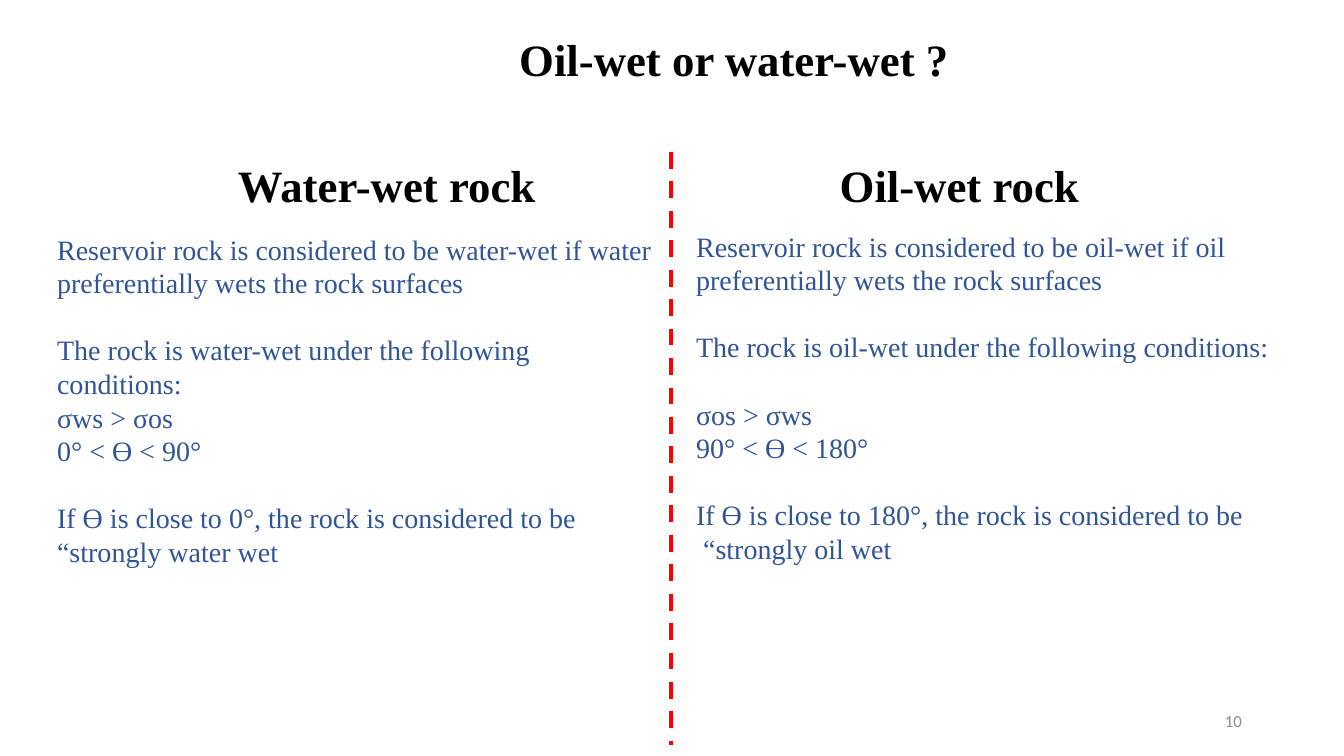
from pptx import Presentation
from pptx.dml.color import RGBColor
from pptx.enum.dml import MSO_LINE_DASH_STYLE as Dash
from pptx.enum.shapes import MSO_CONNECTOR as Connector, MSO_SHAPE as Shape
from pptx.enum.text import MSO_ANCHOR as Anchor, MSO_AUTO_SIZE as AutoSize, PP_ALIGN as Align
from pptx.oxml.ns import qn
from pptx.util import Pt
from lxml.etree import SubElement

PX = 914400 / 100.8
BLACK = RGBColor(0, 0, 0)
BLUE = RGBColor(0x2F, 0x55, 0x97)
RED = RGBColor(0xFF, 0, 0)
GRAY = RGBColor(0x8C, 0x8C, 0x8C)
SERIF = "Times New Roman"
TWO_CONTENT_LAYOUT = 3

# Each condition is (text, whether a one-line gap precedes it)
WATER_WET = [
    ("Reservoir rock is considered to be water-wet if water preferentially wets the rock surfaces", False),
    ("The rock is water-wet under the following conditions:", True),
    ("σws > σos", False),
    ("0° < Ɵ < 90°", False),
    ("If Ɵ is close to 0°, the rock is considered to be “strongly water wet", True),
]
OIL_WET = [
    ("Reservoir rock is considered to be oil-wet if oil preferentially wets the rock surfaces", False),
    ("The rock is oil-wet under the following conditions:", True),
    ("σos > σws", True),
    ("90° < Ɵ < 180°", False),
    ("If Ɵ is close to 180°, the rock is considered to be “strongly oil wet ", True),
]


def px(value):
    return round(value * PX)


def place(shape, left, top, width, height):
    shape.left, shape.top = px(left), px(top)
    shape.width, shape.height = px(width), px(height)


def style(paragraph, size, color, font=SERIF, bold=False, align=Align.LEFT):
    paragraph.alignment = align
    for run in paragraph.runs:
        run.font.name = font
        run.font.size = Pt(size)
        run.font.bold = bold
        run.font.color.rgb = color


def set_frame(shape, anchor):
    frame = shape.text_frame
    frame.word_wrap = True
    frame.auto_size = AutoSize.NONE
    frame.vertical_anchor = anchor
    return frame


def fill_heading(shape, text, box):
    place(shape, *box)
    frame = set_frame(shape, Anchor.MIDDLE)
    frame.text = text
    style(frame.paragraphs[0], 32, BLACK, bold=True, align=Align.CENTER)


def add_column_heading(slide, text, box):
    shape = slide.shapes.add_shape(Shape.ROUNDED_RECTANGLE, 0, 0, 0, 0)
    shape.shadow.inherit = False
    shape.fill.background()
    shape.line.fill.background()
    fill_heading(shape, text, box)


def fill_conditions(shape, conditions, box):
    place(shape, *box)
    frame = set_frame(shape, Anchor.TOP)
    frame.text = "\n".join(text for text, gap in conditions)
    for paragraph, (text, gap) in zip(frame.paragraphs, conditions):
        style(paragraph, 20, BLUE)
        paragraph.line_spacing = Pt(24)
        paragraph.space_before = Pt(24 if gap else 0)
        properties = paragraph._p.get_or_add_pPr()
        properties.set("marL", "0")
        properties.set("indent", "0")
        SubElement(properties, qn("a:buNone"))
    # The closing statement runs right to left
    frame.paragraphs[-1]._p.get_or_add_pPr().set("rtl", "1")


def add_divider(slide, x, top, bottom):
    divider = slide.shapes.add_connector(Connector.STRAIGHT, px(x), px(top), px(x), px(bottom))
    divider.line.color.rgb = RED
    divider.line.width = Pt(3)
    divider.line.dash_style = Dash.DASH
    SubElement(divider._element.spPr, qn("a:effectLst"))


def add_page_number(slide, text, box):
    shape = slide.shapes.add_textbox(0, 0, 0, 0)
    place(shape, *box)
    frame = set_frame(shape, Anchor.MIDDLE)
    frame.text = text
    style(frame.paragraphs[0], 12, GRAY, font="Calibri", align=Align.RIGHT)


def main():
    presentation = Presentation()
    presentation.slide_width, presentation.slide_height = px(1344), px(756)
    slide = presentation.slides.add_slide(presentation.slide_layouts[TWO_CONTENT_LAYOUT])
    title, water_body, oil_body = slide.placeholders

    # Title and divider
    fill_heading(title, "Oil-wet or water-wet ?", (167, 13, 1134, 91))
    add_divider(slide, 671, 152, 745)

    # Two compared columns
    add_column_heading(slide, "Water-wet rock ", (203, 150, 379, 69))
    fill_conditions(water_body, WATER_WET, (47, 227, 621, 350))
    add_column_heading(slide, "Oil-wet rock", (770, 150, 379, 69))
    fill_conditions(oil_body, OIL_WET, (686, 224, 624, 350))

    # Page number
    add_page_number(slide, "10", (950, 701, 302, 40))
    presentation.save("out.pptx")


if __name__ == "__main__":
    main()
